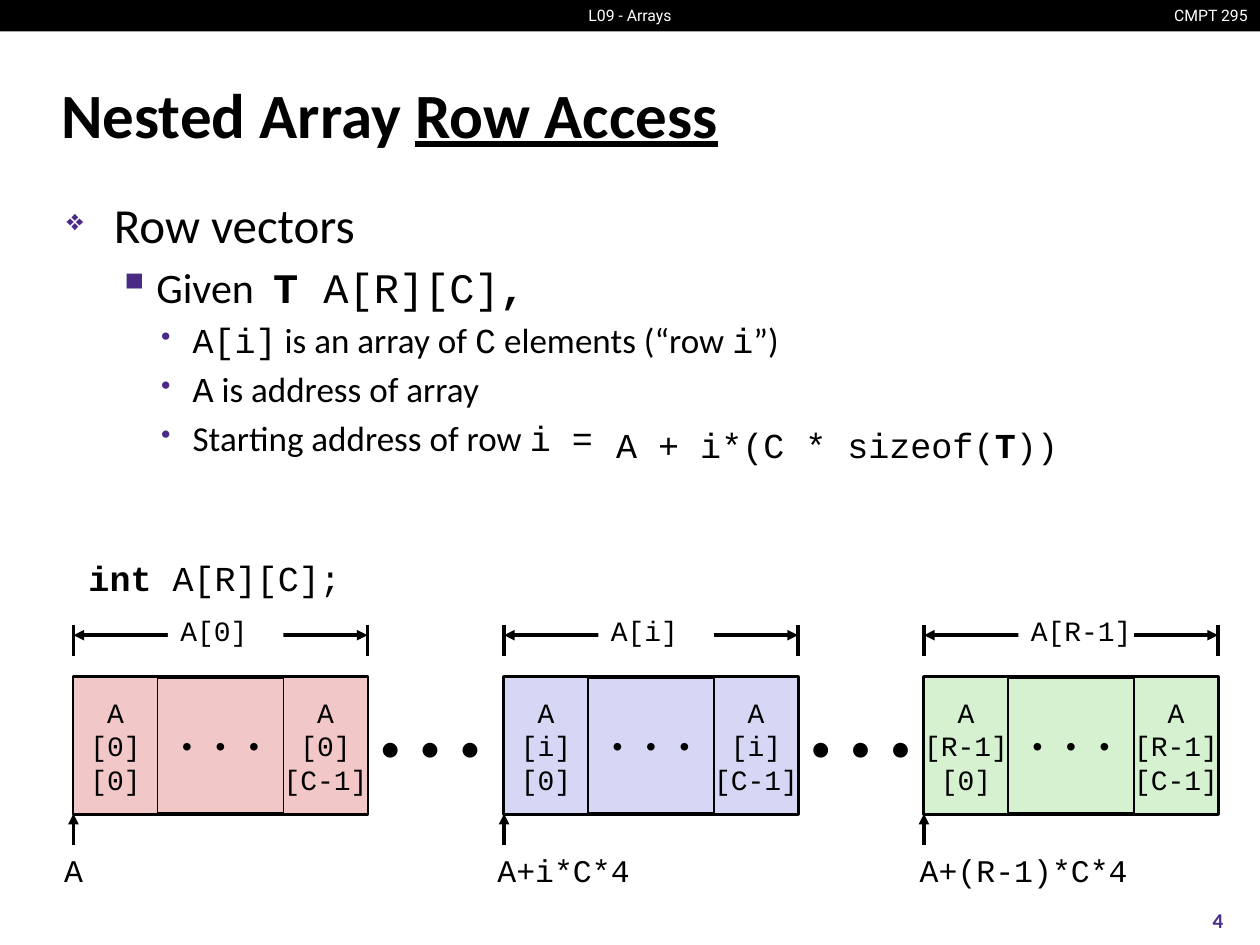
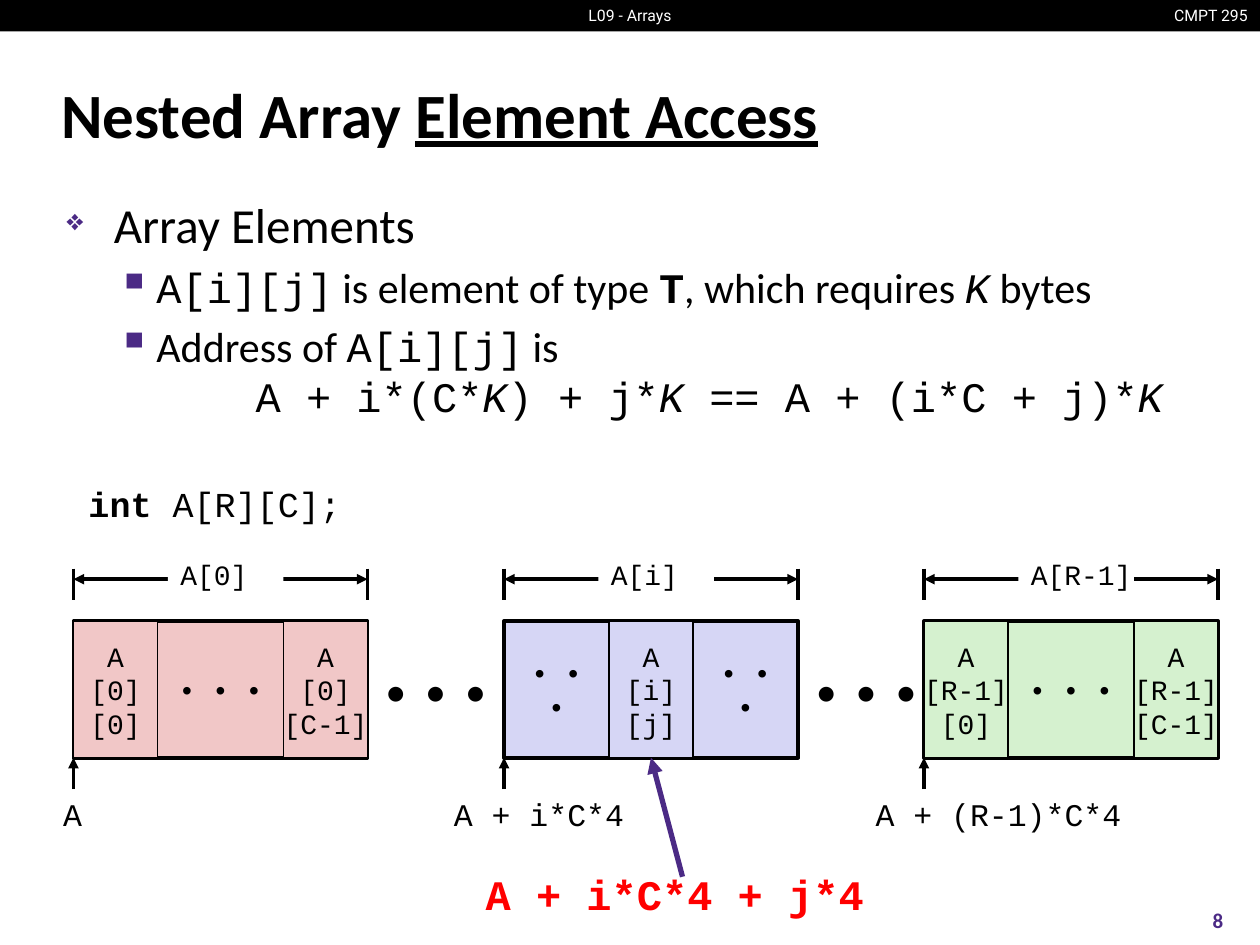
from typing import Any, NamedTuple

import pptx
import pptx.dml.color
import pptx.enum.shapes
import pptx.enum.text
import pptx.oxml.ns
import pptx.shapes.autoshape
import pptx.shapes.connector
import pptx.slide
import pptx.text.text
import pptx.util
from lxml import etree

Pt = pptx.util.Pt
qn = pptx.oxml.ns.qn
ALIGN = pptx.enum.text.PP_ALIGN
ANCHOR = pptx.enum.text.MSO_ANCHOR
RECTANGLE = pptx.enum.shapes.MSO_SHAPE.RECTANGLE

COLOURS = {
    "black": "000000", "white": "FFFFFF", "purple": "4B2A85", "red": "FF0000",
    "pink": "F1C7C7", "lavender": "D6D6F5", "green": "D5F1CF",
}

# Character formats
SANS = {"name": "Calibri"}
MONO = {"name": "Courier New"}
BOLD = {"bold": True}
ITALIC = {"italic": True}
HEADER = {"name": "Roboto", "size": Pt(9)}
TITLE = SANS | BOLD | {"size": Pt(36)}
PAGE_NUMBER = SANS | BOLD | {"size": Pt(12)}
CODE = MONO | {"size": Pt(20)}
CELL = MONO | {"size": Pt(16)}
ADDRESS = MONO | {"size": Pt(18)}
RESULT = MONO | BOLD | {"size": Pt(24)}
BIG_DOTS = SANS | {"size": Pt(24)}

# Geometry of the array diagram, in points
ROW_WIDTH, ROW_HEIGHT, CELL_WIDTH = 168, 78, 48
CELL_DOTS = "• • •"
ROW_DOTS = "•  •  •"


class Span(NamedTuple):
    text: str
    marks: dict[str, Any] = {}


class Frame(NamedTuple):
    left: float
    top: float
    width: float
    height: float


class Level(NamedTuple):
    bullet: str
    percent: int
    margin: float
    hanging: float
    size: int


class Item(NamedTuple):
    level: int
    spans: list[Span]


class Cell(NamedTuple):
    offset: float
    lines: tuple[str, ...]


class Row(NamedTuple):
    left: float
    colour: str
    label: str
    cells: tuple[Cell, ...]
    address: str
    address_left: float
    address_width: float


LEVELS = [
    Level("❖", 60, 27, 27, 28),
    Level("▪", 110, 51.3, 22.5, 24),
    Level("•", 80, 72, 18, 20),
]


def rgb(colour: str) -> pptx.dml.color.RGBColor:
    return pptx.dml.color.RGBColor.from_string(COLOURS[colour])


def lengths(*points: float) -> list[pptx.util.Length]:
    return [Pt(value) for value in points]


def add_spans(para: pptx.text.text._Paragraph, spans: list[Span],
              style: dict[str, Any], colour: str = "black") -> None:
    for span in spans:
        if span.text == "\n":
            para.add_line_break()
            continue
        run = para.add_run()
        run.text = span.text
        for name, value in (style | span.marks).items():
            setattr(run.font, name, value)
        run.font.color.rgb = rgb(colour)


def write(box: pptx.shapes.autoshape.Shape, lines: list[list[Span]],
          style: dict[str, Any], colour: str = "black", align: Any = ALIGN.CENTER,
          anchor: Any = ANCHOR.MIDDLE, wrap: bool = False) -> None:
    text = box.text_frame
    text.word_wrap = wrap
    text.vertical_anchor = anchor
    for index, spans in enumerate(lines):
        para = text.add_paragraph() if index else text.paragraphs[0]
        para.alignment = align
        add_spans(para, spans, style, colour)


def add_label(page: pptx.slide.Slide, frame: Frame, spans: list[Span],
              style: dict[str, Any], **options: Any) -> pptx.shapes.autoshape.Shape:
    box = page.shapes.add_textbox(*lengths(*frame))
    write(box, [spans], style, **({"anchor": ANCHOR.TOP} | options))
    return box


def add_box(page: pptx.slide.Slide, frame: Frame, fill: str,
            line_width: float = 0) -> pptx.shapes.autoshape.Shape:
    box = page.shapes.add_shape(RECTANGLE, *lengths(*frame))
    box.shadow.inherit = False
    box.fill.solid()
    box.fill.fore_color.rgb = rgb(fill)
    if line_width:
        box.line.color.rgb = rgb("black")
        box.line.width = Pt(line_width)
    else:
        box.line.fill.background()
    return box


def add_line(page: pptx.slide.Slide, x1: float, y1: float, x2: float, y2: float,
             arrows: tuple[str, ...] = (), colour: str = "black",
             width: float = 2) -> pptx.shapes.connector.Connector:
    line = page.shapes.add_connector(
        pptx.enum.shapes.MSO_CONNECTOR.STRAIGHT, *lengths(x1, y1, x2, y2))
    line.line.color.rgb = rgb(colour)
    line.line.width = Pt(width)
    for end in arrows:
        etree.SubElement(line.line._get_or_add_ln(), qn(f"a:{end}"), type="triangle")
    etree.SubElement(line._element.spPr, qn("a:effectLst"))
    return line


# Shared page parts
def add_page(deck: Any, subject: str, number: int) -> pptx.slide.Slide:
    page = deck.slides.add_slide(deck.slide_layouts[6])
    add_box(page, Frame(0, 0, 720, 18), "black")
    add_label(page, Frame(661.5, 0, 58.5, 18), [Span("CMPT 295")], HEADER,
              colour="white", align=ALIGN.RIGHT)
    add_label(page, Frame(328, 0, 64, 18), [Span("L09 - Arrays")], HEADER,
              colour="white")
    title = add_label(page, Frame(28, 34.5, 662, 60),
                      [Span("Nested Array "), Span(subject, {"underline": True})],
                      TITLE, align=ALIGN.LEFT, anchor=ANCHOR.MIDDLE, wrap=True)
    indent(title.text_frame.paragraphs[0], 9, 9)
    add_label(page, Frame(672, 511, 48, 29), [Span(str(number))], PAGE_NUMBER,
              colour="purple", anchor=ANCHOR.MIDDLE, wrap=True)
    return page


def indent(para: pptx.text.text._Paragraph, margin: float, hanging: float) -> Any:
    properties = para._p.get_or_add_pPr()
    properties.set("marL", str(Pt(margin)))
    properties.set("indent", str(-Pt(hanging)))
    return properties


def add_body(page: pptx.slide.Slide, items: list[Item], height: float) -> None:
    box = page.shapes.add_textbox(*lengths(31, 107.5, 659, height))
    text = box.text_frame
    text.word_wrap = True
    for index, item in enumerate(items):
        para = text.add_paragraph() if index else text.paragraphs[0]
        level = LEVELS[item.level]
        para.level = item.level
        properties = indent(para, level.margin, level.hanging)
        before = etree.SubElement(properties, qn("a:spcBef"))
        etree.SubElement(before, qn("a:spcPct"), val="20000")
        tint = etree.SubElement(properties, qn("a:buClr"))
        etree.SubElement(tint, qn("a:srgbClr"), val=COLOURS["purple"])
        etree.SubElement(properties, qn("a:buSzPct"), val=str(level.percent * 1000))
        etree.SubElement(properties, qn("a:buChar"), char=level.bullet)
        if any("\t" in span.text for span in item.spans):
            tabs = etree.SubElement(properties, qn("a:tabLst"))
            etree.SubElement(tabs, qn("a:tab"), pos=str(Pt(108)), algn="l")
        add_spans(para, item.spans, SANS | {"size": Pt(level.size)})


# Array diagram
def add_row(page: pptx.slide.Slide, row: Row,
            top: float) -> list[pptx.shapes.autoshape.Shape]:
    left, right = row.left, row.left + ROW_WIDTH
    add_box(page, Frame(left, top, ROW_WIDTH, ROW_HEIGHT), row.colour, 2.25)

    # Cells, with dots in every gap between them
    boxes = []
    gap_left = left
    for cell in row.cells:
        cell_left = left + cell.offset
        box = add_box(page, Frame(cell_left, top, CELL_WIDTH, ROW_HEIGHT), row.colour, 1)
        write(box, [[Span(line)] for line in cell.lines], CELL)
        boxes.append(box)
        add_gap_dots(page, gap_left, cell_left, top)
        gap_left = cell_left + CELL_WIDTH
    add_gap_dots(page, gap_left, right, top)

    # Bracket with its label
    for x in (left, right):
        add_line(page, x, top - 30, x, top - 12)
    add_line(page, left, top - 24, right, top - 24, ("headEnd", "tailEnd"))
    label = add_box(page, Frame(left + 54, top - 42, 66, 30), "white")
    write(label, [[Span(row.label)]], CELL, align=ALIGN.LEFT)

    # Start address
    bottom = top + ROW_HEIGHT
    add_line(page, left, bottom + 18, left, bottom, ("tailEnd",))
    add_label(page, Frame(row.address_left, bottom + 17.5, row.address_width, 29),
              [Span(row.address)], ADDRESS, wrap=True)
    return boxes


def add_gap_dots(page: pptx.slide.Slide, left: float, right: float, top: float) -> None:
    if right > left:
        add_label(page, Frame(left, top, right - left, ROW_HEIGHT), [Span(CELL_DOTS)],
                  CELL, anchor=ANCHOR.MIDDLE)


def add_diagram(page: pptx.slide.Slide, rows: list[Row], top: float, code_top: float,
                dots_align: Any) -> list[list[pptx.shapes.autoshape.Shape]]:
    add_label(page, Frame(42, code_top, 160, 31.5), [Span("int", BOLD), Span(" A[R][C];")],
              CODE, align=ALIGN.RIGHT)
    for row in rows[:-1]:
        gap = add_box(page, Frame(row.left + ROW_WIDTH, top, 78, ROW_HEIGHT), "white")
        write(gap, [[Span(ROW_DOTS)]], BIG_DOTS, align=dots_align)
    return [add_row(page, row, top) for row in rows]


def end_cells(index: str) -> tuple[Cell, ...]:
    return (Cell(0, ("A", f"[{index}]", "[0]")),
            Cell(ROW_WIDTH - CELL_WIDTH, ("A", f"[{index}]", "[C-1]")))


def add_row_access(deck: Any) -> None:
    page = add_page(deck, "Row Access", 4)
    add_body(page, [
        Item(0, [Span("Row vectors")]),
        Item(1, [Span("Given  "), Span("T", MONO | BOLD), Span(" A[R][C]", MONO),
                 Span(",", MONO | BOLD)]),
        Item(2, [Span("A[i]", MONO), Span(" is an array of "), Span("C", MONO),
                 Span(" elements (“row "), Span("i", MONO), Span("”)")]),
        Item(2, [Span("A", MONO), Span(" is address of array")]),
        Item(2, [Span("Starting address of row "), Span("i =", MONO)]),
    ], 410)
    add_diagram(page, [
        Row(42, "pink", "A[0]", end_cells("0"), "A", 26.5, 31),
        Row(288, "lavender", "A[i]", end_cells("i"), "A+i*C*4", 265, 114),
        Row(528, "green", "A[R-1]", end_cells("R-1"), "A+(R-1)*C*4", 516, 138),
    ], 387, 314.5, ALIGN.LEFT)
    add_label(page, Frame(345, 238.5, 275, 31.5),
              [Span("A + i*(C * sizeof("), Span("T", BOLD), Span("))")],
              CODE, align=ALIGN.LEFT, wrap=True)


def add_element_access(deck: Any) -> None:
    page = add_page(deck, "Element Access", 8)
    k = Span("K", MONO | ITALIC)
    add_body(page, [
        Item(0, [Span("Array Elements")]),
        Item(1, [Span("A[i][j]", MONO), Span(" is element of type "),
                 Span("T", MONO | BOLD), Span(", which requires "), k, Span(" bytes")]),
        Item(1, [Span("Address of "), Span("A[i][j]", MONO), Span(" is"), Span("\n"),
                 Span("\t"), Span("A + i*(C*", MONO), k, Span(") + j*", MONO), k,
                 Span(" == A + (i*C + j)*", MONO), k]),
    ], 392)
    middle_cell = (Cell((ROW_WIDTH - CELL_WIDTH) / 2, ("A", "[i]", "[j]")),)
    rows = add_diagram(page, [
        Row(42, "pink", "A[0]", end_cells("0"), "A", 26, 31),
        Row(288, "lavender", "A[i]", middle_cell, "A + i*C*4", 251, 114),
        Row(528, "green", "A[R-1]", end_cells("R-1"), "A + (R-1)*C*4", 489.5, 162),
    ], 355, 272, ALIGN.CENTER)

    # Address of the single element
    add_label(page, Frame(265.5, 493, 240, 36), [Span("A + i*C*4 + j*4")], RESULT,
              colour="red", wrap=True)
    arrow = add_line(page, 390, 501, 372, 433, ("tailEnd",), "purple", 3)
    arrow.end_connect(rows[1][0], 2)


def main() -> None:
    deck = pptx.Presentation()
    deck.slide_width, deck.slide_height = Pt(720), Pt(540)
    add_row_access(deck)
    add_element_access(deck)
    deck.save("out.pptx")


if __name__ == "__main__":
    main()
